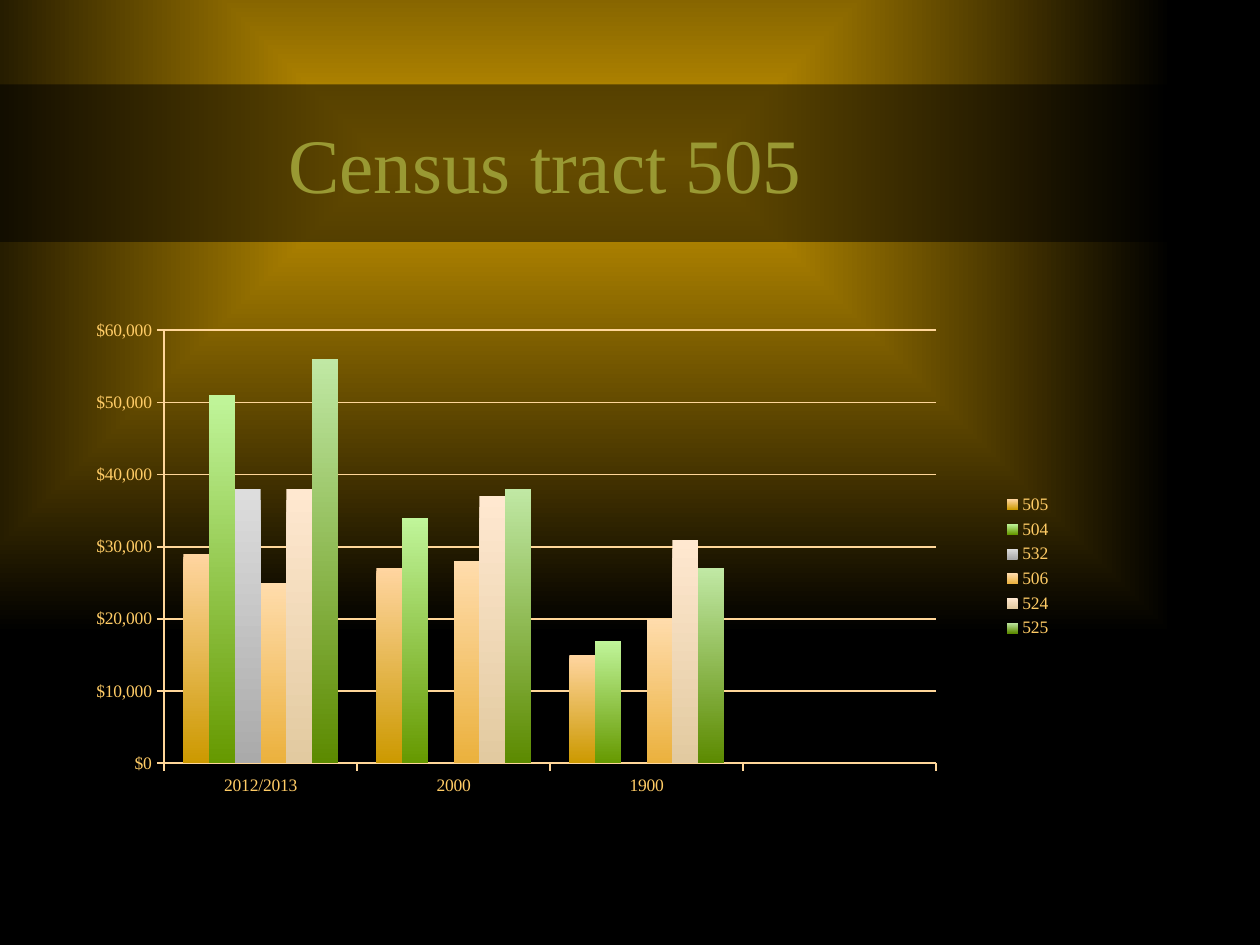
from lxml.etree import SubElement
from pptx import Presentation
from pptx.chart.data import CategoryChartData
from pptx.dml.color import RGBColor
from pptx.enum.chart import XL_CHART_TYPE, XL_LEGEND_POSITION, XL_TICK_MARK
from pptx.enum.shapes import MSO_SHAPE
from pptx.enum.text import MSO_ANCHOR, PP_ALIGN
from pptx.oxml import parse_xml
from pptx.oxml.ns import nsdecls, qn
from pptx.util import Cm, Pt

FONT = "Times New Roman"
LINE_COLOR = "FFD699"
CURRENCY = '"$"#,##0;[Red]\\-"$"#,##0'
CATEGORIES = ["2012/2013", "2000", "1900", ""]
TRACTS = [
    ("505", (29000, 27000, 15000, None), "FFD5A0", "CC9900"),
    ("504", (51000, 34000, 17000, None), "C0F59A", "669900"),
    ("532", (38000, 0, 0, None), "DDDDDD", "AAAAAA"),
    ("506", (25000, 28000, 20000, None), "FFDCAC", "EBB13D"),
    ("524", (38000, 37000, 31000, None), "FFE8D0", "E2CAA0"),
    ("525", (56000, 38000, 27000, None), "C0E8A4", "5C8A00"),
]


def color(value):
    """Turn a hex string into a colour."""
    return RGBColor.from_string(value)


def set_gradient(fill, first, last):
    """Give a fill a two-stop gradient."""
    fill.gradient()
    for stop, value in zip(fill.gradient_stops, (first, last)):
        stop.color.rgb = color(value)


def set_line(line, width=1):
    """Give an axis or gridline its colour and width."""
    line.color.rgb = color(LINE_COLOR)
    line.width = Pt(width)


def manual_layout(target, **values):
    """Build a chart layout from fractions of the chart box."""
    inner = '<c:layoutTarget val="inner"/>' if target == "inner" else ""
    modes = '<c:xMode val="edge"/><c:yMode val="edge"/>'
    sizes = "".join(f'<c:{key} val="{value}"/>' for key, value in values.items())
    return parse_xml(
        f'<c:layout {nsdecls("c")}><c:manualLayout>{inner}{modes}{sizes}'
        "</c:manualLayout></c:layout>"
    )


def place_layout(element, layout, index):
    """Replace any layout of a chart element."""
    for existing in element.findall(qn("c:layout")):
        element.remove(existing)
    element.insert(index, layout)


def paint_background(slide):
    """Fill the slide with a rectangular glow fading to black."""
    set_gradient(slide.background.fill, "CC9900", "000000")
    gradient = slide.element.find(".//" + qn("a:gradFill"))
    gradient.remove(gradient.find(qn("a:lin")))
    glow = SubElement(gradient, qn("a:path"), path="rect")
    SubElement(glow, qn("a:fillToRect"), l="1000", t="9000", r="14000", b="74000")


def add_title_band(slide, left, top, width, height):
    """Add the translucent band and the title on it."""
    band = slide.shapes.add_shape(MSO_SHAPE.RECTANGLE, left, top, width, height)
    band.shadow.inherit = False
    band.fill.solid()
    band.fill.fore_color.rgb = color("000000")
    band.line.fill.background()
    black = band.fill._xPr.find(".//" + qn("a:srgbClr"))
    SubElement(black, qn("a:alpha"), val="50000")

    title = slide.shapes.add_textbox(left + Cm(0.2), top, Cm(21.59), height)
    frame = title.text_frame
    frame.word_wrap = True
    frame.vertical_anchor = MSO_ANCHOR.MIDDLE
    paragraph = frame.paragraphs[0]
    paragraph.alignment = PP_ALIGN.CENTER
    run = paragraph.add_run()
    run.text = "Census tract 505"
    run.font.name = FONT
    run.font.size = Pt(44)
    run.font.color.rgb = color("999933")


def add_tract_chart(slide, left, top, width, height):
    """Add the clustered columns comparing the tracts."""
    data = CategoryChartData(number_format=CURRENCY)
    data.categories = CATEGORIES
    for name, values, _, _ in TRACTS:
        data.add_series(name, values)
    chart = slide.shapes.add_chart(
        XL_CHART_TYPE.COLUMN_CLUSTERED, left, top, width, height, data
    ).chart
    chart.has_title = False
    chart.font.name = FONT
    chart.font.size = Pt(10)
    chart.font.color.rgb = color("FFCC66")

    plot = chart.plots[0]
    plot.vary_by_categories = False
    plot.gap_width = 150
    plot.overlap = 0
    for series, (_, _, light, dark) in zip(plot.series, TRACTS):
        set_gradient(series.format.fill, light, dark)
        series.format.fill.gradient_angle = 270
        series.format.line.fill.background()

    for axis in (chart.category_axis, chart.value_axis):
        axis.major_tick_mark = XL_TICK_MARK.OUTSIDE
        axis.minor_tick_mark = XL_TICK_MARK.NONE
        set_line(axis.format.line)
    value_axis = chart.value_axis
    value_axis.minimum_scale = 0
    value_axis.maximum_scale = 60000
    value_axis.major_unit = 10000
    value_axis.has_major_gridlines = True
    set_line(value_axis.major_gridlines.format.line)
    value_axis.tick_labels.number_format = CURRENCY
    value_axis.tick_labels.number_format_is_linked = False

    chart.has_legend = True
    chart.legend.position = XL_LEGEND_POSITION.RIGHT
    chart.legend.include_in_layout = False
    plot_area = chart.element.find(".//" + qn("c:plotArea"))
    place_layout(plot_area, manual_layout("inner", x=0.092, y=0.05, w=0.782, h=0.842), 0)
    legend = chart.element.find(".//" + qn("c:legend"))
    place_layout(legend, manual_layout("outer", x=0.94, y=0.36), 1)


def main():
    """Build and save the slide."""
    presentation = Presentation()
    presentation.slide_width = Cm(25.4)
    presentation.slide_height = Cm(19.05)
    slide = presentation.slides.add_slide(presentation.slide_layouts[6])
    paint_background(slide)
    add_title_band(slide, Cm(0), Cm(1.7), Cm(25.4), Cm(3.18))
    add_tract_chart(slide, Cm(1.48), Cm(6.14), Cm(19.9), Cm(10.37))
    presentation.save("out.pptx")


if __name__ == "__main__":
    main()
